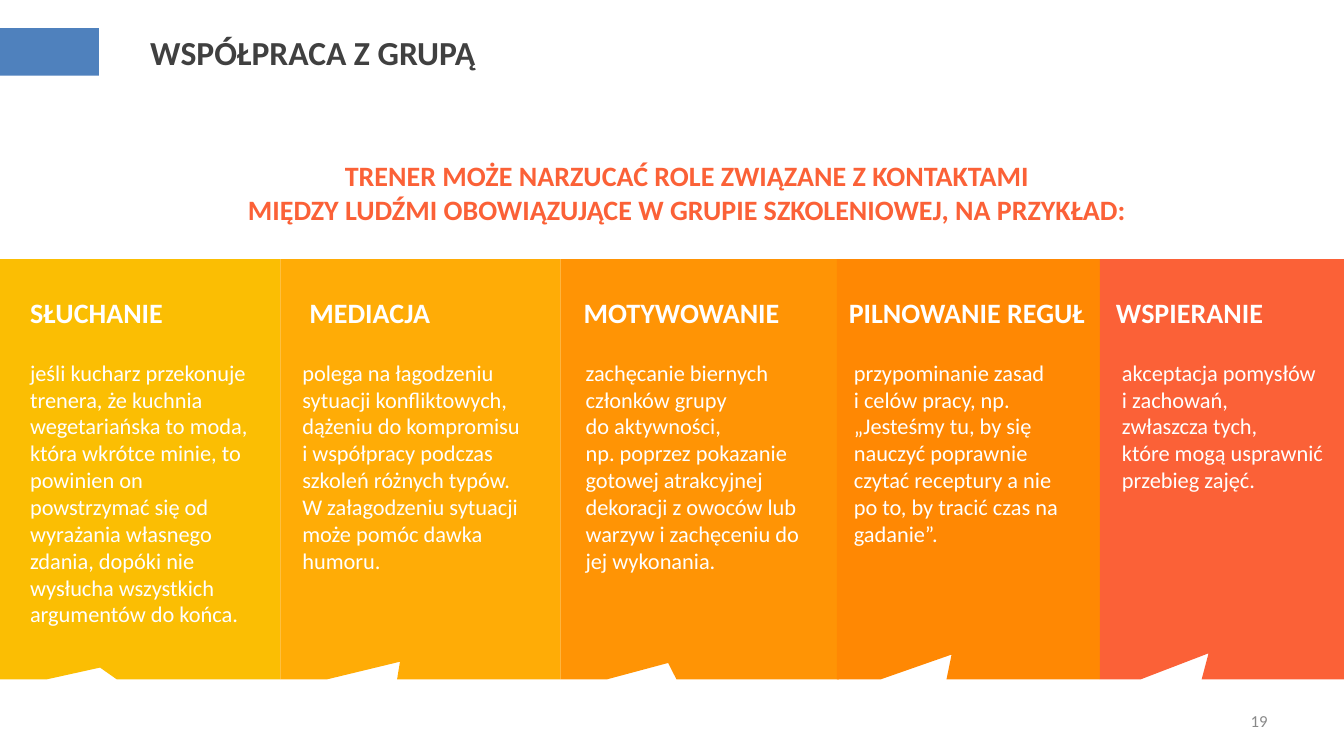
from dataclasses import dataclass

from pptx import Presentation
from pptx.dml.color import RGBColor
from pptx.enum.shapes import MSO_SHAPE
from pptx.enum.text import MSO_ANCHOR, PP_ALIGN
from pptx.util import Inches, Pt

COLOURS = {
    "title": "404040", "marker": "4F81BD", "lead": "FB6137",
    "number": "898989", "white": "FFFFFF",
    "listening": "FBBE03", "mediation": "FFAC06", "motivation": "FF9405",
    "rules": "FF8803", "support": "FB6137",
}
COLUMN_TOP, COLUMN_HEIGHT = 2.57, 4.17
HEADING_TOP, HEADING_HEIGHT = 2.88, 0.44
BODY_TOP, BODY_HEIGHT = 3.51, 2.79


@dataclass
class Role:
    colour: str
    left: float
    width: float
    tip: tuple[float, float]
    heading: str
    heading_left: float
    heading_width: float
    body: str
    body_left: float
    body_width: float


ROLES = [
    Role("listening", 0, 2.78, (-0.143, 0.472), "SŁUCHANIE", 0.2, 2.35,
         "jeśli kucharz przekonuje trenera, że kuchnia wegetariańska to moda, "
         "która wkrótce minie, to powinien on powstrzymać się od wyrażania "
         "własnego zdania, dopóki nie wysłucha wszystkich argumentów do końca.",
         0.2, 2.46),
    Role("mediation", 2.78, 2.78, (-0.073, 0.458), "MEDIACJA", 2.97, 2.59,
         "polega na łagodzeniu sytuacji konfliktowych, \ndążeniu do kompromisu \n"
         "i współpracy podczas szkoleń różnych typów. \n"
         "W załagodzeniu sytuacji może pomóc dawka humoru.",
         2.9, 2.59),
    Role("motivation", 5.56, 2.76, (-0.113, 0.461), "MOTYWOWANIE", 5.69, 2.4,
         "zachęcanie biernych członków grupy \ndo aktywności, \n"
         "np. poprzez pokazanie gotowej atrakcyjnej dekoracji z owoców lub "
         "warzyw i zachęceniu do jej wykonania.",
         5.71, 2.53),
    Role("rules", 8.3, 2.61, (-0.064, 0.441), "PILNOWANIE REGUŁ", 8.32, 2.63,
         "przypominanie zasad \ni celów pracy, np. „Jesteśmy tu, by się nauczyć "
         "poprawnie czytać receptury a nie po to, by tracić czas na gadanie”.",
         8.37, 2.41),
    Role("support", 10.91, 2.42, (-0.055, 0.438), "WSPIERANIE", 10.97, 2.36,
         "akceptacja pomysłów\ni zachowań, \nzwłaszcza tych, \n"
         "które mogą usprawnić przebieg zajęć.",
         11.03, 2.3),
]


def place(box, left: float, top: float, width: float, height: float) -> None:
    box.left, box.top = Inches(left), Inches(top)
    box.width, box.height = Inches(width), Inches(height)


def write(box, text: str, size: int, colour: str, bold: bool = False,
          align=PP_ALIGN.LEFT, anchor=MSO_ANCHOR.TOP) -> None:
    frame = box.text_frame
    frame.word_wrap = True
    frame.vertical_anchor = anchor
    para = frame.paragraphs[0]
    para.text = text
    para.alignment = align
    formats = {"name": "Calibri", "size": Pt(size), "bold": bold}
    for span in para.runs:
        for attribute, value in formats.items():
            setattr(span.font, attribute, value)
        span.font.color.rgb = RGBColor.from_string(COLOURS[colour])


def add_text(page, area: tuple[float, float, float, float], *content, **options) -> None:
    box = page.shapes.add_textbox(*map(Inches, area))
    write(box, *content, **options)


def add_filled(page, preset, area: tuple[float, float, float, float], colour: str):
    shape = page.shapes.add_shape(preset, *map(Inches, area))
    shape.shadow.inherit = False
    shape.fill.solid()
    shape.fill.fore_color.rgb = RGBColor.from_string(COLOURS[colour])
    shape.line.fill.background()
    return shape


def add_role(page, role: Role) -> None:
    callout = add_filled(page, MSO_SHAPE.RECTANGULAR_CALLOUT,
                         (role.left, COLUMN_TOP, role.width, COLUMN_HEIGHT), role.colour)
    for index, offset in enumerate(role.tip):
        callout.adjustments[index] = offset
    add_text(page, (role.heading_left, HEADING_TOP, role.heading_width, HEADING_HEIGHT),
             role.heading, 20, "white", bold=True)
    add_text(page, (role.body_left, BODY_TOP, role.body_width, BODY_HEIGHT),
             role.body, 16, "white")


def main() -> None:
    deck = Presentation()
    deck.slide_width, deck.slide_height = Inches(13.33), Inches(7.5)
    page = deck.slides.add_slide(deck.slide_layouts[5])

    # Title with its marker
    add_filled(page, MSO_SHAPE.RECTANGLE, (0, 0.28, 0.98, 0.47), "marker")
    title = page.shapes.title
    place(title, 1.39, 0.21, 5.99, 0.62)
    write(title, "WSPÓŁPRACA Z GRUPĄ", 24, "title", bold=True, anchor=MSO_ANCHOR.MIDDLE)

    # Lead sentence
    add_text(page, (1.57, 1.6, 10.55, 0.62),
             "TRENER MOŻE NARZUCAĆ ROLE ZWIĄZANE Z KONTAKTAMI \n"
             "MIĘDZY LUDŹMI OBOWIĄZUJĄCE W GRUPIE SZKOLENIOWEJ, NA PRZYKŁAD: ",
             20, "lead", bold=True, align=PP_ALIGN.CENTER, anchor=MSO_ANCHOR.MIDDLE)

    # Role columns
    for role in ROLES:
        add_role(page, role)

    # Page number
    add_text(page, (9.56, 6.95, 3.11, 0.4), "19", 12, "number",
             align=PP_ALIGN.RIGHT, anchor=MSO_ANCHOR.MIDDLE)

    deck.save("out.pptx")


if __name__ == "__main__":
    main()
